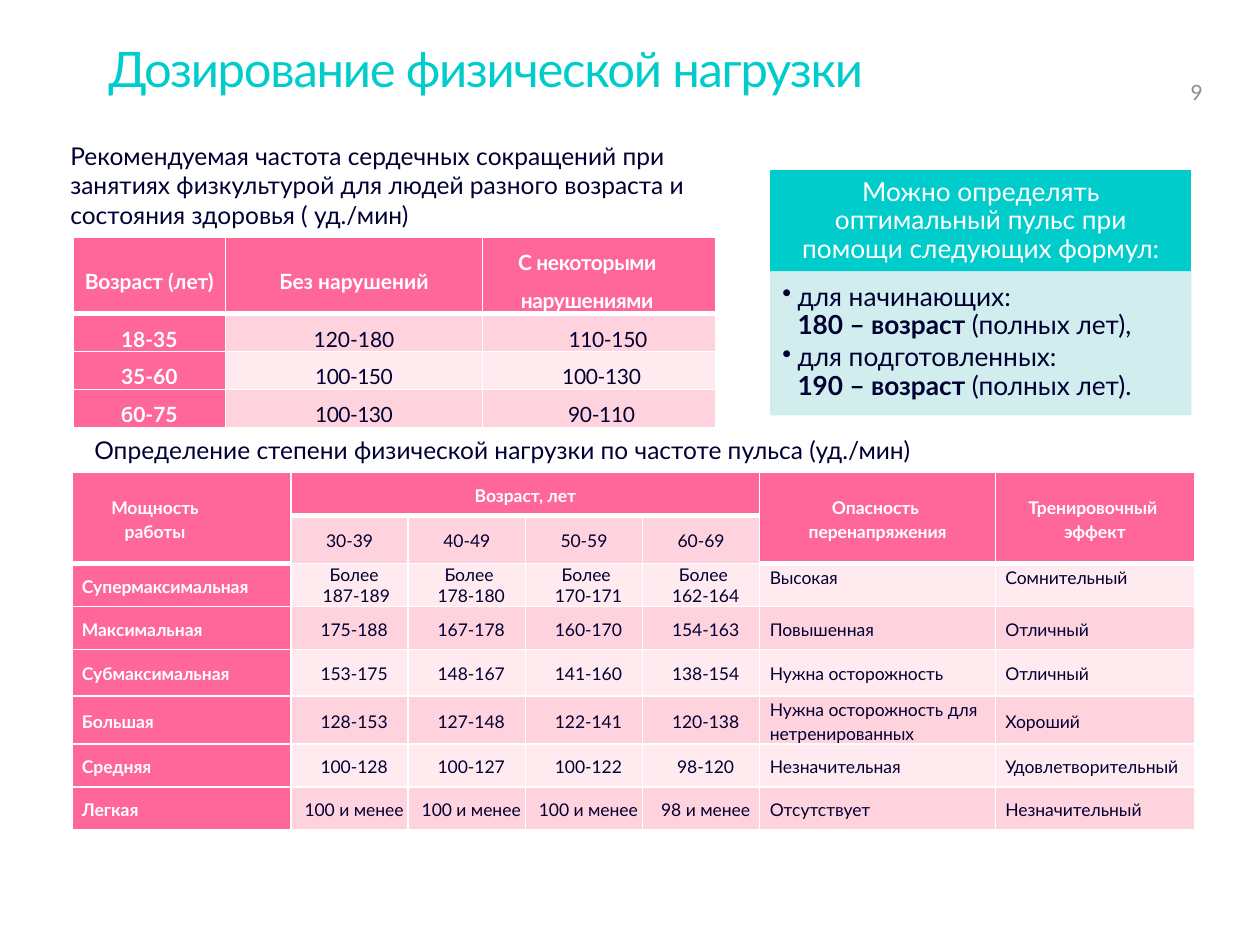
from copy import deepcopy
from dataclasses import dataclass

from lxml.etree import SubElement
from pptx import Presentation
from pptx.dml.color import RGBColor
from pptx.enum.shapes import MSO_SHAPE
from pptx.enum.text import MSO_ANCHOR, PP_ALIGN
from pptx.oxml.ns import qn
from pptx.slide import Slide
from pptx.table import Table, _Cell
from pptx.text.text import TextFrame
from pptx.util import Inches, Pt


@dataclass(frozen=True)
class Theme:
    """Colours, font and type sizes of the slide."""
    font: str = "Lato"
    ink: str = "000033"
    white: str = "FFFFFF"
    teal: str = "00CCCC"
    pale_teal: str = "CCECEC"
    pink: str = "FF6699"
    bands: tuple[str, str] = ("FFD3DE", "FFEAEF")
    grey: str = "8C8C90"
    title: float = 28
    card: float = 15
    caption: float = 14
    pulse: float = 12
    load: float = 10


@dataclass(frozen=True)
class Area:
    """Place and size in inches."""
    left: float
    top: float
    width: float
    height: float

    def lengths(self) -> tuple[Inches, Inches, Inches, Inches]:
        """Return the four lengths that a new shape needs."""
        return Inches(self.left), Inches(self.top), Inches(self.width), Inches(self.height)


THEME = Theme()
CENTER = PP_ALIGN.CENTER

PULSE_ROWS = [
    ["Возраст (лет)", "Без нарушений", "С некоторыми нарушениями"],
    ["18-35", "120-180", "110-150"],
    ["35-60", "100-150", "100-130"],
    ["б0-75", "100-130", "90-110"],
]
LOAD_ROWS = [
    ["Мощность работы", "Возраст, лет", "", "", "", "Опасность \vперенапряжения", "Тренировочный \vэффект"],
    ["", "30-39", "40-49", "50-59", "60-69", "", ""],
    ["Супермаксимальная", "Более\n 187-189", "Более \n178-180", "Более \n170-171", "Более \n162-164",
     "Высокая", "Сомнительный"],
    ["Максимальная", "175-188", "167-178", "160-170", "154-163", "Повышенная", "Отличный"],
    ["Субмаксимальная", "153-175", "148-167", "141-160", "138-154", "Нужна осторожность", "Отличный"],
    ["Большая", "128-153", "127-148", "122-141", "120-138",
     "Нужна осторожность для \vнетренированных", "Хороший"],
    ["Средняя", "100-128", "100-127", "100-122", "98-120", "Незначительная", "Удовлетворительный"],
    ["Легкая", "100 и менее", "100 и менее", "100 и менее", "98 и менее", "Отсутствует", "Незначительный"],
]


def write(frame: TextFrame, text: str, *, size: float, color: str = THEME.ink, bold: bool = False,
          strong: tuple[str, ...] = (), align: PP_ALIGN = PP_ALIGN.LEFT, line: float | Pt = 1.0,
          before: float = 0, after: float = 0, indent: float = 0, right: float = 0,
          spacing: float = 0, bullet: bool = False) -> None:
    """Fill a frame: newlines part paragraphs, vertical tabs break lines, strong phrases turn bold."""
    for number, content in enumerate(text.split("\n")):
        para = frame.add_paragraph() if number else frame.paragraphs[0]
        para.alignment, para.line_spacing = align, line
        para.space_before, para.space_after = Pt(before), Pt(after)
        properties = para._p.get_or_add_pPr()
        properties.set("marL", str(Inches(indent)))
        properties.set("marR", str(Inches(right)))
        properties.set("indent", str(-Inches(indent) if bullet else 0))
        if bullet:
            SubElement(properties, qn("a:buChar"), char="•")
        for phrase in strong:
            content = content.replace(phrase, f"\t{phrase}\t")
        for order, part in enumerate(content.split("\t")):
            for row, words in enumerate(part.split("\v")):
                if row:
                    para.add_line_break()
                if not words:
                    continue
                span = para.add_run()
                span.text = words
                span.font.name, span.font.size = THEME.font, Pt(size)
                span.font.bold = bold or order % 2 == 1
                span.font.color.rgb = RGBColor.from_string(color)
                if spacing:
                    span._r.get_or_add_rPr().set("spc", str(round(spacing * 100)))
        for line_break in para._p.findall(qn("a:br")):
            line_break.append(deepcopy(para.runs[0]._r.rPr))


def set_margins(holder: TextFrame | _Cell, left: float, top: float, right: float, bottom: float) -> None:
    """Set the inner margins of a text frame or cell in inches."""
    holder.margin_left, holder.margin_top = Inches(left), Inches(top)
    holder.margin_right, holder.margin_bottom = Inches(right), Inches(bottom)


def add_text(page: Slide, area: Area, text: str, *, margins: tuple[float, ...] = (0.1, 0.05, 0.1, 0.05),
             anchor: MSO_ANCHOR = MSO_ANCHOR.TOP, **text_format) -> None:
    """Add a wrapped text box."""
    frame = page.shapes.add_textbox(*area.lengths()).text_frame
    frame.word_wrap, frame.vertical_anchor = True, anchor
    set_margins(frame, *margins)
    write(frame, text, **text_format)


def add_panel(page: Slide, area: Area, text: str, *, fill: str, margins: tuple[float, ...],
              anchor: MSO_ANCHOR, opacity: int = 100, **text_format) -> None:
    """Add a filled rectangle that holds text."""
    box = page.shapes.add_shape(MSO_SHAPE.RECTANGLE, *area.lengths())
    box.shadow.inherit = False
    box.fill.solid()
    box.line.width = Pt(1)
    for color in (box.fill.fore_color, box.line.color):
        color.rgb = RGBColor.from_string(fill)
    if opacity < 100:
        for tint in box._element.spPr.iter(qn("a:srgbClr")):
            SubElement(tint, qn("a:alpha"), val=str(opacity * 1000))
    frame = box.text_frame
    frame.word_wrap, frame.vertical_anchor = True, anchor
    set_margins(frame, *margins)
    write(frame, text, **text_format)


def style_cell(cell: _Cell, fill: str, bottom: float = 1) -> None:
    """Give a cell its white borders, fill and empty margins."""
    properties = cell._tc.get_or_add_tcPr()
    for side, width in (("L", 1), ("R", 1), ("T", 1), ("B", bottom)):
        border = SubElement(properties, qn(f"a:ln{side}"), w=str(Pt(width)))
        SubElement(SubElement(border, qn("a:solidFill")), qn("a:srgbClr"), val=THEME.white)
    cell.fill.solid()
    cell.fill.fore_color.rgb = RGBColor.from_string(fill)
    cell.vertical_anchor = MSO_ANCHOR.MIDDLE
    set_margins(cell, 0, 0, 0, 0)


def add_grid(page: Slide, area: Area, widths: list[float], heights: list[float]) -> Table:
    """Add an empty table with the given column widths and row heights."""
    table = page.shapes.add_table(len(heights), len(widths), *area.lengths()).table
    for column, width in zip(table.columns, widths):
        column.width = Inches(width)
    for row, height in zip(table.rows, heights):
        row.height = Inches(height)
    return table


def add_pulse_table(page: Slide) -> None:
    """Add the recommended heart rates by age and health."""
    table = add_grid(page, Area(0.58, 1.88, 5.1, 1.51), [1.21, 2.04, 1.85], [0.61] + [0.28] * 3)
    indents = {(1, 2): 0.14, (2, 2): 0.04, (3, 2): 0.04}
    for row, texts in enumerate(PULSE_ROWS):
        for column, text in enumerate(texts):
            heading = row == 0 or column == 0
            cell = table.cell(row, column)
            style_cell(cell, THEME.pink if heading else THEME.bands[(row - 1) % 2], 1 if row else 3)
            write(cell.text_frame, text, size=THEME.pulse, bold=heading,
                  color=THEME.white if heading else THEME.ink, align=CENTER, line=1.5, after=10,
                  indent=indents.get((row, column), 0), right=0.19 if (row, column) == (0, 2) else 0,
                  spacing=-0.3 if row > 1 and column == 1 else -0.2 if column == 2 else 0)


def add_load_table(page: Slide) -> None:
    """Add the degrees of load by pulse."""
    table = add_grid(page, Area(0.57, 3.75, 8.91, 2.82), [1.74] + [0.93] * 4 + [1.87, 1.58],
                     [0.34] * 4 + [0.37, 0.36] + [0.34] * 2)
    outer = (0, 5, 6)
    for row, texts in enumerate(LOAD_ROWS):
        for column, text in enumerate(texts):
            heading = row == 0 or column == 0 or (row == 1 and column in outer)
            cell = table.cell(row, column)
            style_cell(cell, THEME.pink if heading else THEME.bands[(row - 1) % 2],
                       3 if row < 2 and heading else 1)
            if not text:
                continue
            if row == 2 and column > 4:
                cell.vertical_anchor = MSO_ANCHOR.TOP
            stacked = "\n" in text
            first = row == 0 and column == 0
            write(cell.text_frame, text, size=THEME.load, bold=heading,
                  color=THEME.white if heading else THEME.ink,
                  align=CENTER if row < 2 or column not in outer else PP_ALIGN.LEFT,
                  line=1.0 if stacked else 1.15, after=0 if stacked else 10,
                  indent=0.07 if first else 0 if row < 2 else 0.08 if column in outer else 0.07,
                  right=0.49 if first else 0)
    table.cell(0, 1).merge(table.cell(0, 4))
    for column in outer:
        table.cell(0, column).merge(table.cell(1, column))


def main() -> None:
    """Build and save the slide."""
    deck = Presentation()
    deck.slide_width, deck.slide_height = Inches(10), Inches(7.5)
    page = deck.slides.add_slide(deck.slide_layouts[6])
    add_text(page, Area(0.86, 0.28, 8.62, 0.72), "Дозирование физической нагрузки", size=THEME.title,
             color=THEME.teal, line=Pt(32), spacing=-0.7, margins=(0, 0.05, 0, 0.05))
    add_text(page, Area(9.45, 0.4, 0.38, 0.47), "9", size=THEME.pulse, color=THEME.grey,
             margins=(0, 0.04, 0, 0.04), anchor=MSO_ANCHOR.BOTTOM)
    add_panel(page, Area(6.12, 1.36, 3.33, 0.79), "Можно определять оптимальный пульс при помощи следующих формул:",
              fill=THEME.teal, margins=(0.12, 0.07, 0.12, 0.07), anchor=MSO_ANCHOR.MIDDLE,
              size=THEME.card, color=THEME.white, align=CENTER, line=0.9)
    add_panel(page, Area(6.12, 2.16, 3.33, 1.13),
              "для начинающих:\v180 – возраст (полных лет),\nдля подготовленных: \v190 – возраст (полных лет).",
              strong=("180 – возраст ", "190 – возраст "), fill=THEME.pale_teal, opacity=90,
              margins=(0.09, 0.09, 0.12, 0.13), anchor=MSO_ANCHOR.TOP, size=THEME.card,
              line=0.9, after=2.25, indent=0.12, bullet=True)
    add_text(page, Area(0.46, 1.07, 5.67, 0.81), "Рекомендуемая частота сердечных сокращений при занятиях "
             "физкультурой для людей разного возраста и состояния здоровья ( уд./мин)", size=THEME.caption)
    add_pulse_table(page)
    add_load_table(page)
    add_text(page, Area(0.65, 3.4, 6.89, 0.34),
             "Определение степени физической нагрузки по частоте пульса (уд./мин)", size=THEME.caption)
    deck.save("out.pptx")


if __name__ == "__main__":
    main()
